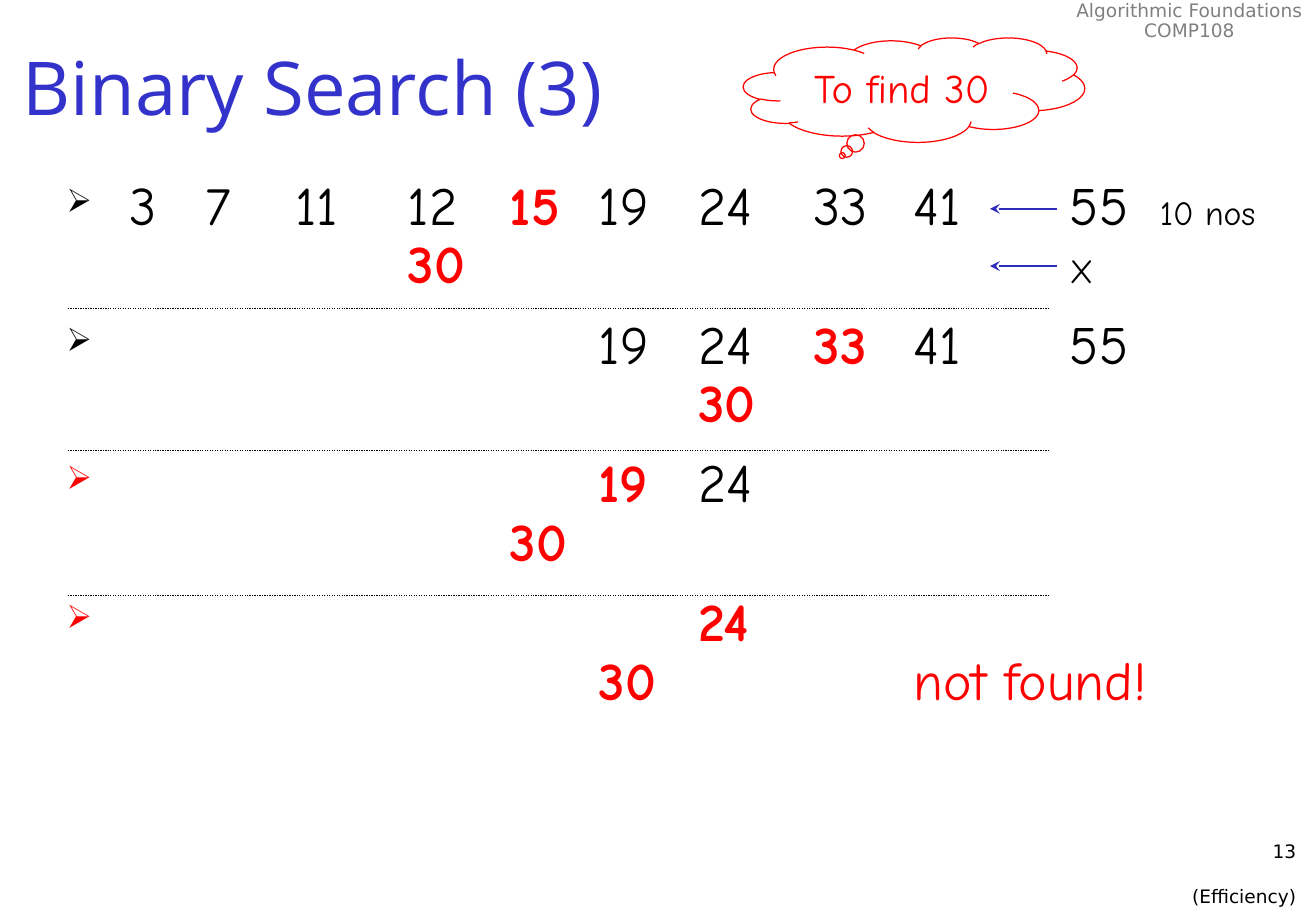
from dataclasses import dataclass

from lxml.etree import SubElement
from pptx import Presentation
from pptx.dml.color import RGBColor
from pptx.enum.dml import MSO_LINE
from pptx.enum.shapes import MSO_CONNECTOR, MSO_SHAPE
from pptx.enum.text import MSO_ANCHOR, PP_ALIGN
from pptx.oxml.ns import qn
from pptx.slide import Slide
from pptx.text.text import TextFrame, _Paragraph
from pptx.util import Pt


@dataclass(frozen=True)
class Theme:
    ink: RGBColor = RGBColor(0x00, 0x00, 0x00)
    highlight: RGBColor = RGBColor(0xFF, 0x00, 0x00)
    heading: RGBColor = RGBColor(0x33, 0x33, 0xCC)
    arrow: RGBColor = RGBColor(0x2D, 0x2D, 0xB9)
    muted: RGBColor = RGBColor(0x80, 0x80, 0x80)
    hand_font: str = "Comic Neue"
    title_font: str = "Open Sans"
    small_font: str = "DejaVu Sans"
    title_size: float = 44
    number_size: float = 32
    cloud_size: float = 24
    note_size: float = 20
    small_size: float = 11


@dataclass(frozen=True)
class Box:
    left: float
    top: float
    width: float
    height: float


@dataclass(frozen=True)
class Label:
    box: Box
    lines: tuple[str, ...]
    font: str
    size: float
    color: RGBColor
    align: PP_ALIGN = PP_ALIGN.LEFT
    anchor: MSO_ANCHOR = MSO_ANCHOR.TOP
    wrap: bool = True
    line_spacing: float = 1.0
    gap: float = 0


@dataclass(frozen=True)
class Cell:
    column: int
    text: str
    color: RGBColor
    bold: bool = False
    size: float = 32


@dataclass(frozen=True)
class Step:
    first: int
    last: int
    middle: int
    number_notes: tuple[Cell, ...] = ()
    target_notes: tuple[Cell, ...] = ()


@dataclass(frozen=True)
class Stroke:
    start: float
    end: float
    y: float
    color: RGBColor
    width: float
    dash: MSO_LINE | None = None
    arrowhead: bool = False


THEME = Theme()
NUMBERS = (3, 7, 11, 12, 15, 19, 24, 33, 41, 55)
TARGET = 30
TAB_STOPS = (82.1, 135.4, 202.3, 262.8, 315.4, 374.4, 442.8, 501.8, 594.7, 648)
INDENT = 37.44
STEPS_BOX = Box(32.4, 102.2, 734.4, 354.2)
CLOUD_BOX = Box(440.6, 22.3, 202.3, 61.9)

LABELS = (
    Label(Box(630, -2.9, 150, 31), ("Algorithmic Foundations", "COMP108"),
          THEME.small_font, THEME.small_size, THEME.muted,
          align=PP_ALIGN.CENTER, wrap=False, line_spacing=0.9),
    Label(Box(612.7, 494.6, 162.7, 36), ("13", "(Efficiency)"),
          THEME.small_font, THEME.small_size, THEME.ink, align=PP_ALIGN.RIGHT, gap=13.5),
    Label(Box(6.5, 5.8, 773.3, 90), ("Binary Search (3)",),
          THEME.title_font, THEME.title_size, THEME.heading, anchor=MSO_ANCHOR.MIDDLE),
)
CLOUD = Label(CLOUD_BOX, (f"To find {TARGET}",), THEME.hand_font, THEME.cloud_size,
              THEME.highlight, PP_ALIGN.CENTER, MSO_ANCHOR.MIDDLE, wrap=False)

STEPS = (
    Step(0, 9, 4, (Cell(10, "10 nos", THEME.ink, size=THEME.note_size),),
         (Cell(9, "X", THEME.ink, size=THEME.note_size),)),
    Step(5, 9, 7),
    Step(5, 6, 5),
    Step(6, 6, 6, target_notes=(Cell(8, "not found!", THEME.highlight),)),
)
STROKES = (
    *(Stroke(40.3, 622.1, y, THEME.ink, 0.75, dash=MSO_LINE.ROUND_DOT)
      for y in (182.9, 267.1, 352.8)),
    *(Stroke(626.4, 586.8, y, THEME.arrow, 1.5, arrowhead=True) for y in (123.8, 157.7)),
)


def add_text_frame(slide: Slide, box: Box) -> TextFrame:
    return slide.shapes.add_textbox(
        Pt(box.left), Pt(box.top), Pt(box.width), Pt(box.height)).text_frame


def fill_label(frame: TextFrame, label: Label) -> None:
    frame.word_wrap = label.wrap
    frame.vertical_anchor = label.anchor
    for index, line in enumerate(label.lines):
        paragraph = frame.add_paragraph() if index else frame.paragraphs[0]
        paragraph.text = line
        paragraph.alignment = label.align
        paragraph.line_spacing = label.line_spacing
        paragraph.space_before = Pt(label.gap if index else 0)
        paragraph.font.name = label.font
        paragraph.font.size = Pt(label.size)
        paragraph.font.color.rgb = label.color


def add_cells(paragraph: _Paragraph, cells: tuple[Cell, ...]) -> None:
    column = 0
    for cell in cells:
        run = paragraph.add_run()
        run.text = "\t" * (cell.column - column) + cell.text
        run.font.size = Pt(cell.size)
        run.font.bold = cell.bold
        run.font.color.rgb = cell.color
        column = cell.column


def format_step(paragraph: _Paragraph) -> None:
    properties = paragraph._p.get_or_add_pPr()
    properties.set("marL", str(Pt(INDENT)))
    properties.set("indent", str(Pt(-INDENT)))
    SubElement(properties, qn("a:buSzPct")).set("val", "60000")
    SubElement(properties, qn("a:buFont")).set("typeface", "Wingdings")
    SubElement(properties, qn("a:buChar")).set("char", "Ø")
    tabs = SubElement(properties, qn("a:tabLst"))
    for position in TAB_STOPS:
        SubElement(tabs, qn("a:tab"), pos=str(Pt(position)), algn="l")
    paragraph.line_spacing = 0.9
    paragraph.space_before = paragraph.space_after = Pt(6.6)
    paragraph.font.name = THEME.hand_font
    paragraph.font.size = Pt(THEME.number_size)


def add_step(paragraph: _Paragraph, step: Step) -> None:
    format_step(paragraph)
    numbers = tuple(
        Cell(column, str(NUMBERS[column]),
             THEME.highlight if column == step.middle else THEME.ink, column == step.middle)
        for column in range(step.first, step.last + 1))
    target = Cell(step.middle - 1, str(TARGET), THEME.highlight, bold=True)
    add_cells(paragraph, (*numbers, *step.number_notes))
    paragraph.add_line_break()
    add_cells(paragraph, (target, *step.target_notes))


def add_stroke(slide: Slide, stroke: Stroke) -> None:
    connector = slide.shapes.add_connector(
        MSO_CONNECTOR.STRAIGHT, Pt(stroke.start), Pt(stroke.y), Pt(stroke.end), Pt(stroke.y))
    connector.line.color.rgb = stroke.color
    connector.line.width = Pt(stroke.width)
    if stroke.dash is not None:
        connector.line.dash_style = stroke.dash
    if stroke.arrowhead:
        SubElement(connector.line._get_or_add_ln(), qn("a:tailEnd")).set("type", "stealth")
    SubElement(connector._element.spPr, qn("a:effectLst"))


def add_cloud(slide: Slide, label: Label) -> None:
    box = label.box
    cloud = slide.shapes.add_shape(
        MSO_SHAPE.CLOUD_CALLOUT, Pt(box.left), Pt(box.top), Pt(box.width), Pt(box.height))
    cloud.adjustments[0] = -0.21
    cloud.adjustments[1] = 0.63
    cloud.shadow.inherit = False
    cloud.fill.background()
    cloud.line.color.rgb = label.color
    cloud.line.width = Pt(0.75)
    fill_label(cloud.text_frame, label)


def main() -> None:
    presentation = Presentation()
    presentation.slide_width = Pt(780)
    presentation.slide_height = Pt(540)
    slide = presentation.slides.add_slide(presentation.slide_layouts[6])
    for label in LABELS:
        fill_label(add_text_frame(slide, label.box), label)
    steps_frame = add_text_frame(slide, STEPS_BOX)
    steps_frame.word_wrap = True
    for index, step in enumerate(STEPS):
        add_step(steps_frame.add_paragraph() if index else steps_frame.paragraphs[0], step)
    for stroke in STROKES:
        add_stroke(slide, stroke)
    add_cloud(slide, CLOUD)
    presentation.save("out.pptx")


if __name__ == "__main__":
    main()
